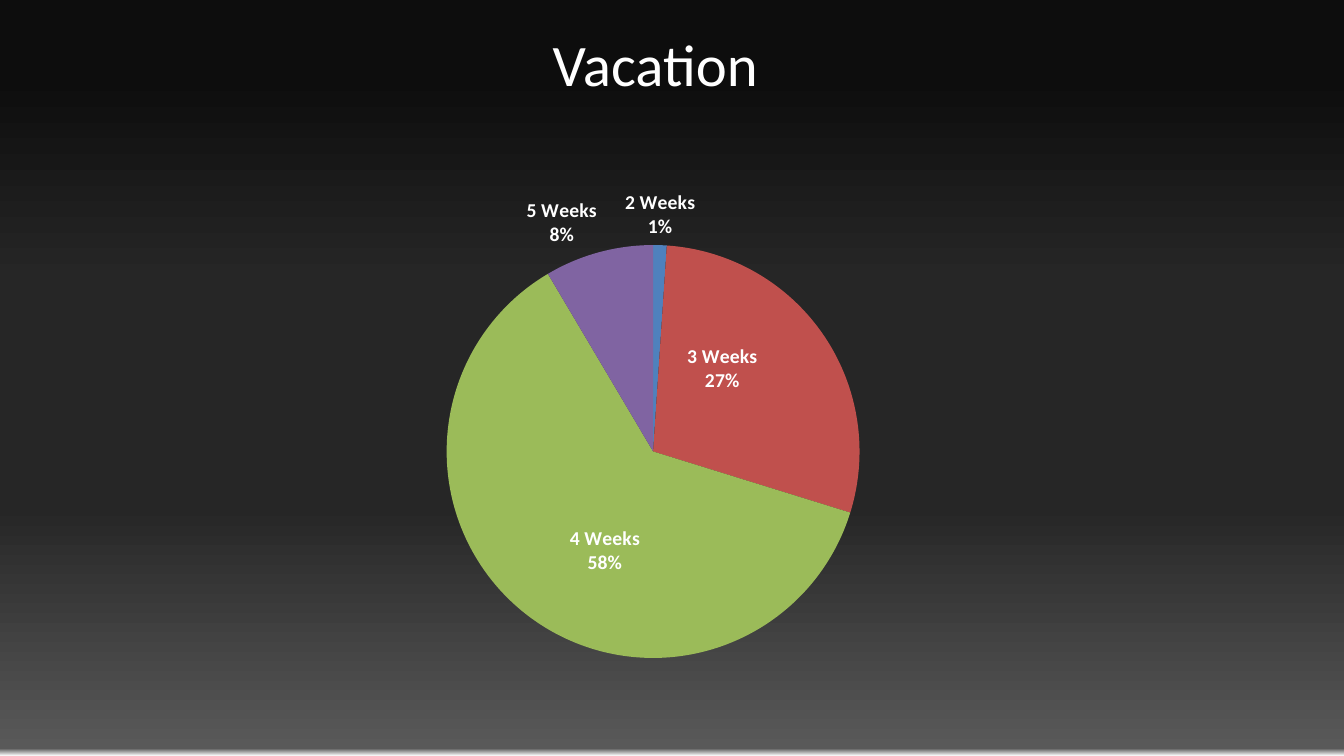
from lxml.etree import SubElement
from pptx import Presentation
from pptx.chart.data import CategoryChartData
from pptx.dml.color import RGBColor
from pptx.enum.chart import XL_CHART_TYPE as CT, XL_LABEL_POSITION as LP
from pptx.enum.text import MSO_ANCHOR, PP_ALIGN
from pptx.oxml import parse_xml
from pptx.oxml.ns import nsdecls, qn
from pptx.util import Pt

# Content: weeks, share, colour, label position, label shift (fraction of the chart)
TITLE = "Vacation"
SLICES = [
    ("2 Weeks", 0.01, "4F81BD", LP.OUTSIDE_END, None),
    ("3 Weeks", 0.27, "C0504D", LP.CENTER, (-0.02, -0.04)),
    ("4 Weeks", 0.58, "9BBB59", LP.CENTER, (0.02, 0.03)),
    ("5 Weeks", 0.08, "8064A2", LP.OUTSIDE_END, None),
]
THEME = {
    "font": "Calibri", "text": "FFFFFF", "title": 42, "label": 14,
    "stops": [(10, "0D0D0D"), (37, "262626"), (67, "262626"),
              (99, "595959"), (100, "FFFFFF")],
}
SLIDE = (960, 540)
TITLE_BOX = (144, 0, 648, 90)
CHART_BOX = (185, 78.5, 566, 437)
PLOT = {"x": 0.137, "y": 0.221, "w": 0.721, "h": 0.675}


def set_font(font, size, bold):
    values = {"name": THEME["font"], "size": Pt(size), "bold": bold}
    for name, value in values.items():
        setattr(font, name, value)
    font.color.rgb = RGBColor.from_string(THEME["text"])


def manual_layout(**values):
    layout = parse_xml(f"<c:layout {nsdecls('c')}><c:manualLayout/></c:layout>")
    for name, value in values.items():
        SubElement(layout[0], qn(f"c:{name}")).set("val", str(value))
    return layout


prs = Presentation()
prs.slide_width, prs.slide_height = map(Pt, SLIDE)
s = prs.slides.add_slide(prs.slide_layouts[5])

# Background gradient
fill = s.background.fill
fill.gradient()
fill.gradient_angle = 270
stops = next(s.element.iter(qn("a:gsLst")))
for stop in list(stops):
    stops.remove(stop)
for percent, color in THEME["stops"]:
    stop = SubElement(stops, qn("a:gs"), pos=str(percent * 1000))
    SubElement(stop, qn("a:srgbClr"), val=color)

# Title
title = s.shapes.title
for name, value in zip(("left", "top", "width", "height"), TITLE_BOX):
    setattr(title, name, Pt(value))
tf = title.text_frame
tf.text = TITLE
tf.vertical_anchor = MSO_ANCHOR.MIDDLE
p = tf.paragraphs[0]
p.alignment = PP_ALIGN.CENTER
set_font(p.runs[0].font, THEME["title"], False)

# Pie chart
data = CategoryChartData(number_format="0%")
data.categories = [row[0] for row in SLICES]
data.add_series("Series 1", [row[1] for row in SLICES])
chart = s.shapes.add_chart(CT.PIE, *map(Pt, CHART_BOX), data).chart
chart.has_legend = chart.has_title = False
set_font(chart.font, THEME["label"], True)
plot = chart.plots[0]
plot.vary_by_categories = True
area = next(chart.element.iter(qn("c:plotArea")))
for old in area.findall(qn("c:layout")):
    area.remove(old)
area.insert(0, manual_layout(layoutTarget="inner", xMode="edge", yMode="edge", **PLOT))

# Slices and their labels
for point_no, (_, _, color, position, shift) in enumerate(SLICES):
    point = plot.series[0].points[point_no]
    point.format.fill.solid()
    point.format.fill.fore_color.rgb = RGBColor.from_string(color)
    label = point.data_label
    set_font(label.font, THEME["label"], True)
    label.position = position
labels = plot.series[0].data_labels
labels.show_value = labels.show_category_name = True
labels.show_percentage = False
labels.number_format, labels.number_format_is_linked = "0%", False
set_font(labels.font, THEME["label"], True)
for label, row in zip(area.iter(qn("c:dLbl")), SLICES):
    label.find(qn("c:showCatName")).set("val", "1")
    SubElement(label, qn("c:separator")).text = "\n"
    if row[4]:
        label.insert(1, manual_layout(x=row[4][0], y=row[4][1]))

prs.save("out.pptx")
